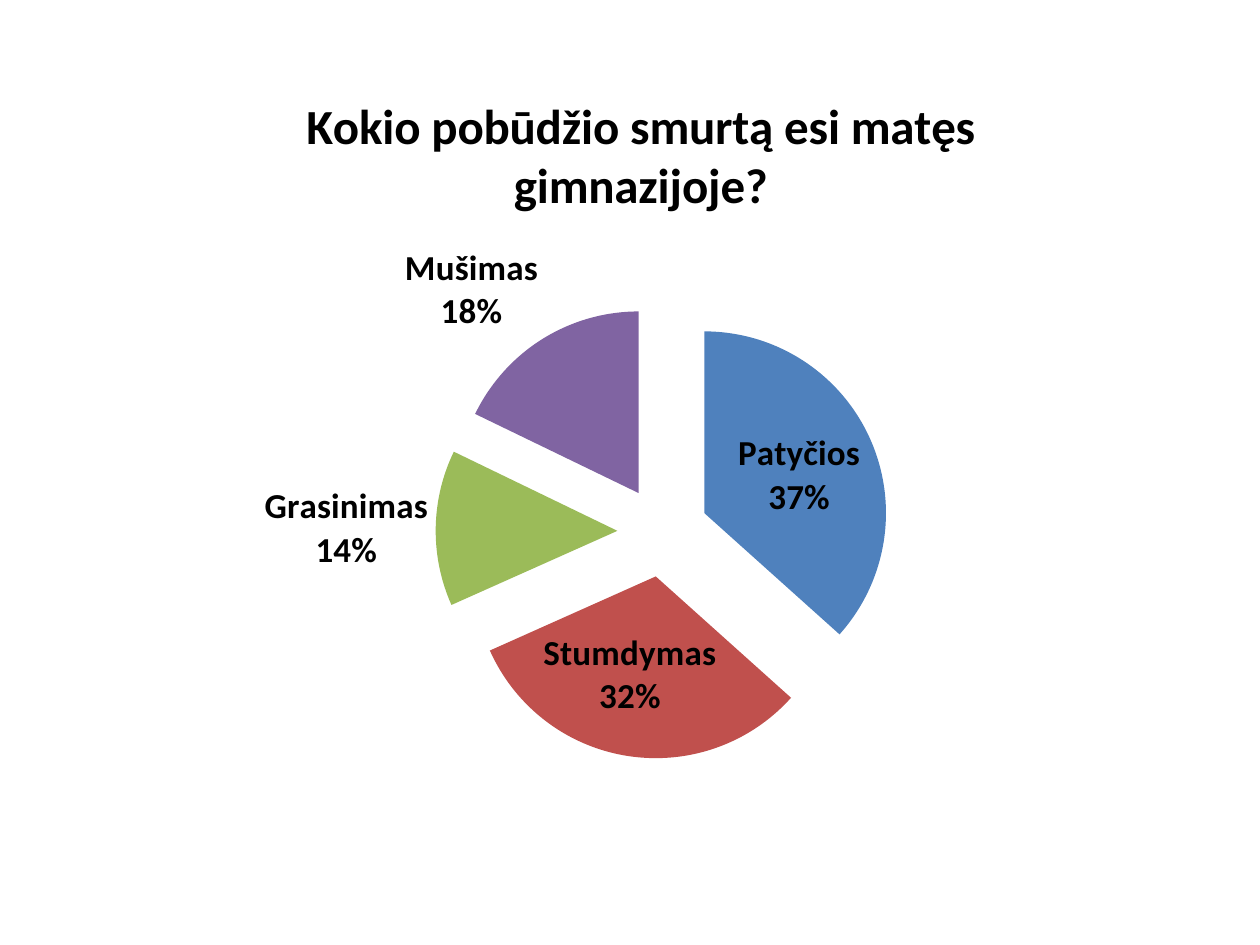
from dataclasses import dataclass

from lxml.etree import SubElement
from pptx import Presentation
from pptx.chart.chart import Chart
from pptx.chart.data import CategoryChartData
from pptx.dml.color import RGBColor
from pptx.enum.chart import XL_CHART_TYPE, XL_LABEL_POSITION
from pptx.oxml import parse_xml
from pptx.oxml.ns import nsdecls, qn
from pptx.util import Pt

BLACK = RGBColor(0x00, 0x00, 0x00)
BLUE = RGBColor(0x4F, 0x81, 0xBD)
RED = RGBColor(0xC0, 0x50, 0x4D)
GREEN = RGBColor(0x9B, 0xBB, 0x59)
PURPLE = RGBColor(0x80, 0x64, 0xA2)
FONT = "Calibri"
TITLE = "Kokio pobūdžio smurtą esi matęs gimnazijoje?"
EXPLOSION = 25
TITLE_AREA = {"x": 0.2, "y": 0.03}
PLOT_AREA = {"x": 0.36, "y": 0.36, "w": 0.32, "h": 0.45}


@dataclass(frozen=True)
class Slice:
    """One answer in the pie."""

    name: str
    value: int
    color: RGBColor


SLICES = [
    Slice("Patyčios", 37, BLUE),
    Slice("Stumdymas", 32, RED),
    Slice("Grasinimas", 14, GREEN),
    Slice("Mušimas", 18, PURPLE),
]


def set_font(font, size: int, bold: bool) -> None:
    """Apply the chart typeface at the given size and weight."""
    font.name = FONT
    font.size = Pt(size)
    font.bold = bold
    font.color.rgb = BLACK


def make_layout(area: dict[str, float], inner: bool = False):
    """Return a manual layout given as fractions of the chart."""
    layout = parse_xml(f"<c:layout {nsdecls('c')}/>")
    manual = SubElement(layout, qn("c:manualLayout"))
    if inner:
        SubElement(manual, qn("c:layoutTarget"), val="inner")
    for side in "xy":
        SubElement(manual, qn(f"c:{side}Mode"), val="edge")
    for key, fraction in area.items():
        SubElement(manual, qn(f"c:{key}"), val=str(fraction))
    return layout


def set_title(chart: Chart) -> None:
    """Write the question above the pie."""
    chart.has_title = True
    chart.chart_title.include_in_layout = False
    p = chart.chart_title.text_frame.paragraphs[0]
    p.text = TITLE
    set_font(p.font, 28, True)
    title = chart.chart_title._element
    for old in title.findall(qn("c:layout")):
        title.remove(old)
    title.find(qn("c:tx")).addnext(make_layout(TITLE_AREA))


def set_plot_area(chart: Chart) -> None:
    """Fix the inner plot area."""
    plot_area = chart._chartSpace.chart.plotArea
    for old in plot_area.findall(qn("c:layout")):
        plot_area.remove(old)
    plot_area.insert(0, make_layout(PLOT_AREA, inner=True))


def style_slices(chart: Chart) -> None:
    """Colour each slice and pull it out from the centre."""
    series = chart.plots[0].series[0]
    for i, item in enumerate(SLICES):
        fill = series.points[i].format.fill
        fill.solid()
        fill.fore_color.rgb = item.color
    for point in series._element.findall(qn("c:dPt")):
        explosion = parse_xml(f'<c:explosion {nsdecls("c")} val="{EXPLOSION}"/>')
        point.find(qn("c:spPr")).addprevious(explosion)


def set_labels(chart: Chart) -> None:
    """Label each slice with its name above its percentage."""
    labels = chart.plots[0].series[0].data_labels
    set_font(labels.font, 20, True)
    labels.number_format = "0%"
    labels.number_format_is_linked = False
    labels.show_value = False
    labels.show_category_name = True
    labels.show_percentage = True
    labels.position = XL_LABEL_POSITION.BEST_FIT
    separator = parse_xml(f"<c:separator {nsdecls('c')}>\n</c:separator>")
    labels._element.find(qn("c:showBubbleSize")).addnext(separator)


def main() -> None:
    """Build the slide and save it."""
    prs = Presentation()
    prs.slide_width, prs.slide_height = Pt(720), Pt(540)
    s = prs.slides.add_slide(prs.slide_layouts[6])

    data = CategoryChartData()
    data.categories = [item.name for item in SLICES]
    data.add_series("Series 1", [item.value for item in SLICES])
    chart = s.shapes.add_chart(
        XL_CHART_TYPE.PIE, Pt(39.6), Pt(33.84), Pt(652.32), Pt(461.52), data
    ).chart
    set_font(chart.font, 10, False)
    chart.has_legend = False
    chart.plots[0].vary_by_categories = True

    set_title(chart)
    set_plot_area(chart)
    style_slices(chart)
    set_labels(chart)
    prs.save("out.pptx")


if __name__ == "__main__":
    main()
